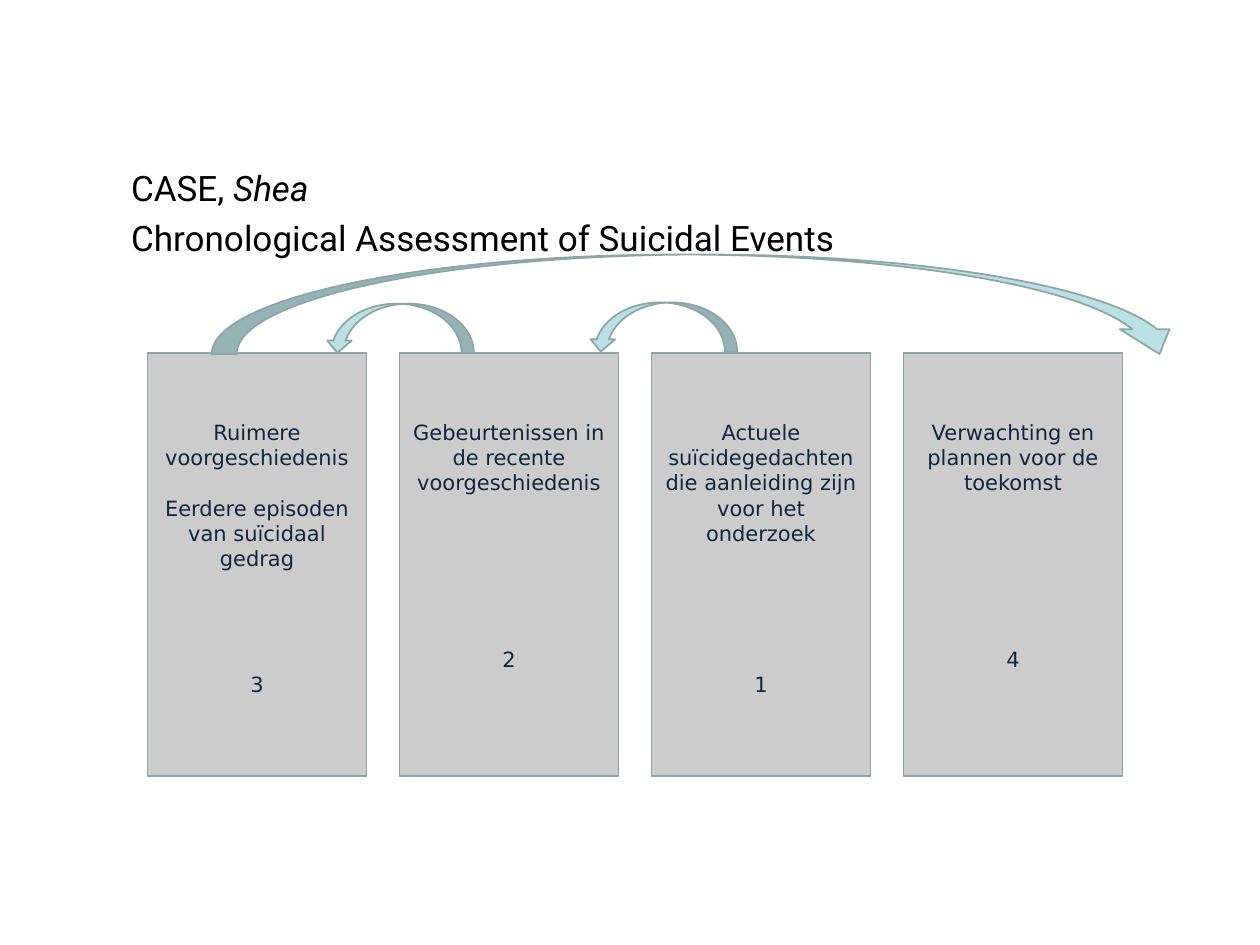
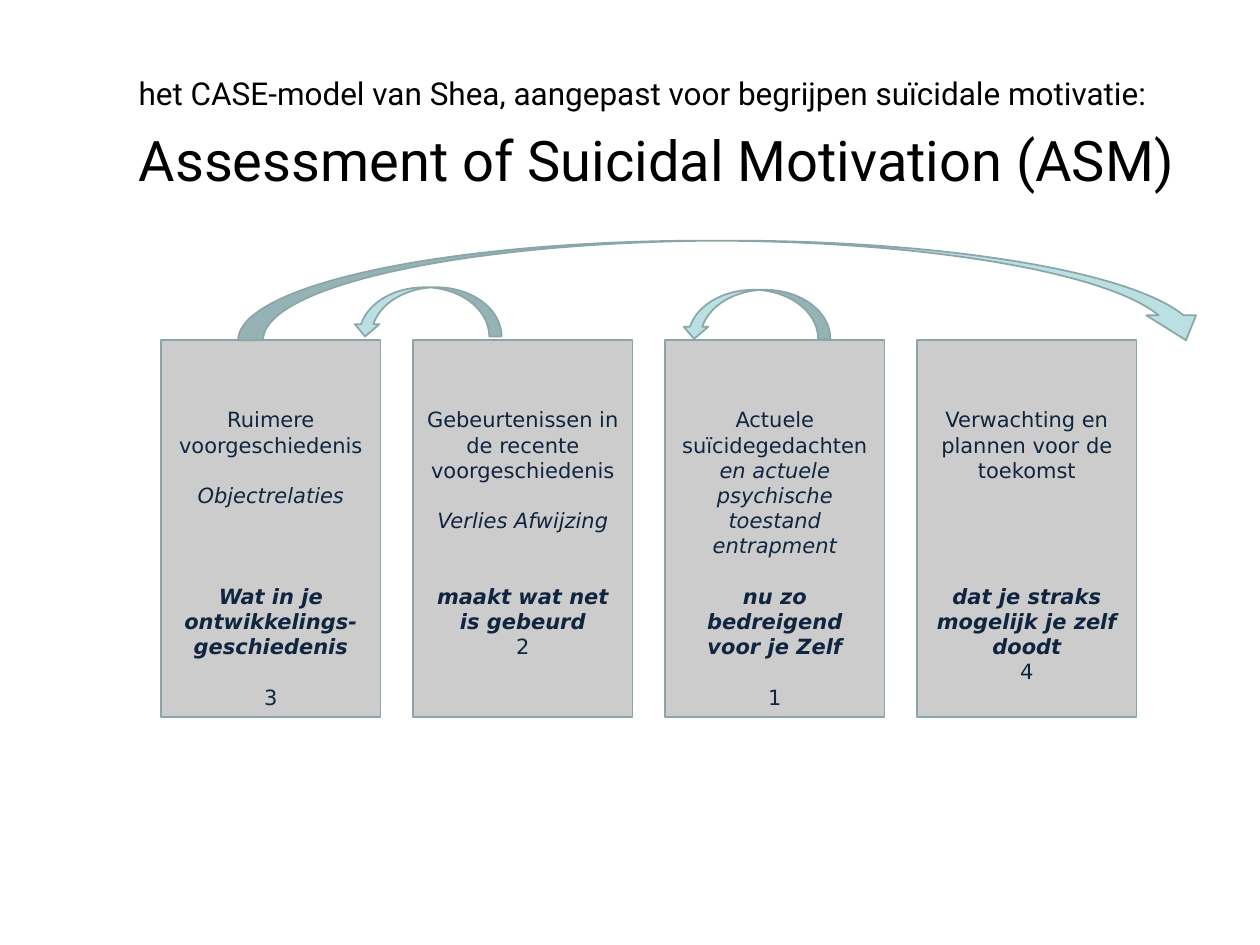
from dataclasses import dataclass

from pptx import Presentation
from pptx.dml.color import RGBColor
from pptx.enum.shapes import MSO_SHAPE
from pptx.enum.text import MSO_ANCHOR, MSO_AUTO_SIZE, PP_ALIGN
from pptx.util import Inches, Pt

RECT = MSO_SHAPE.RECTANGLE
ARC_FORWARD = MSO_SHAPE.CURVED_DOWN_ARROW
ARC_BACK = MSO_SHAPE.CURVED_UP_ARROW
TOP = MSO_ANCHOR.TOP
LEFT, CENTER = PP_ALIGN.LEFT, PP_ALIGN.CENTER
NO_FIT = MSO_AUTO_SIZE.NONE

TITLE_ONLY = 5
TITLE_FONT, CARD_FONT = "Roboto", "DejaVu Sans"
BLACK, GREY, AQUA, EDGE = "000000", "CCCCCC", "BBE0E3", "8AA6A8"
INKS = ("10253F", "0F243E")
CARD_SIZE, CARD_LINE = 12, 14.4
CARD_WIDTH, CARD_STEP, CARD_INSET = 1.74, 2.0, 0.53


@dataclass
class Run:
    """A piece of text with its emphasis."""
    text: str
    italic: bool = False
    bold: bool = False


@dataclass
class Para:
    """Runs of one paragraph and the number of lines left free above it."""
    runs: list[Run]
    gap: int = 0


@dataclass
class TitleLine:
    """One line of a title with its size and space before in points."""
    runs: list[Run]
    size: float
    before: float = 0


@dataclass
class Box:
    """A place on the slide in inches."""
    left: float
    top: float
    width: float
    height: float


@dataclass
class Model:
    """Everything shown on one slide."""
    title_box: Box
    title: list[TitleLine]
    first_card: Box
    cards: list[list[Para]]
    forward: Box
    back: list[Box]


def color(hex_value: str) -> RGBColor:
    """Turn a hex string into a colour."""
    return RGBColor.from_string(hex_value)


def plain(text: str, gap: int = 0) -> Para:
    """Make an upright paragraph."""
    return Para([Run(text)], gap)


def slanted(text: str, gap: int = 0) -> Para:
    """Make an italic paragraph."""
    return Para([Run(text, italic=True)], gap)


def strong(text: str, gap: int = 0) -> Para:
    """Make a bold italic paragraph."""
    return Para([Run(text, italic=True, bold=True)], gap)


def add_runs(p, runs: list[Run], font: str, size: float, ink: str) -> None:
    """Add formatted runs to a paragraph."""
    for run in runs:
        r = p.add_run()
        r.text = run.text
        r.font.name, r.font.size = font, Pt(size)
        r.font.bold, r.font.italic = run.bold, run.italic
        r.font.color.rgb = color(ink)


def next_para(tf, index: int):
    """Return the first paragraph or append a new one."""
    return tf.add_paragraph() if index else tf.paragraphs[0]


def place(sp, box: Box) -> None:
    """Move and size a shape."""
    sp.left, sp.top = Inches(box.left), Inches(box.top)
    sp.width, sp.height = Inches(box.width), Inches(box.height)


def add_title(s, box: Box, lines: list[TitleLine]) -> None:
    """Fill and format the title placeholder."""
    sp = s.shapes.title
    place(sp, box)
    tf = sp.text_frame
    tf.word_wrap, tf.auto_size, tf.vertical_anchor = True, NO_FIT, TOP
    for i, line in enumerate(lines):
        p = next_para(tf, i)
        p.alignment, p.space_before = LEFT, Pt(line.before)
        add_runs(p, line.runs, TITLE_FONT, line.size, BLACK)


def add_outlined(s, kind, box: Box, fill: str):
    """Add a filled shape with the shared outline."""
    sp = s.shapes.add_shape(kind, Inches(box.left), Inches(box.top),
                            Inches(box.width), Inches(box.height))
    sp.shadow.inherit = False
    sp.fill.solid()
    sp.fill.fore_color.rgb = color(fill)
    sp.line.color.rgb = color(EDGE)
    sp.line.width = Pt(1)
    return sp


def add_card(s, box: Box, paras: list[Para], ink: str) -> None:
    """Add a phase card with its text."""
    tf = add_outlined(s, RECT, box, GREY).text_frame
    tf.word_wrap, tf.vertical_anchor = True, TOP
    tf.margin_top = Inches(CARD_INSET)
    for i, para in enumerate(paras):
        p = next_para(tf, i)
        p.alignment, p.space_before = CENTER, Pt(para.gap * CARD_LINE)
        add_runs(p, para.runs, CARD_FONT, CARD_SIZE, ink)


def add_model(prs, model: Model) -> None:
    """Add a slide with title, four cards and their arrows."""
    s = prs.slides.add_slide(prs.slide_layouts[TITLE_ONLY])
    add_title(s, model.title_box, model.title)
    first = model.first_card
    for i, paras in enumerate(model.cards):
        box = Box(first.left + i * CARD_STEP, first.top, first.width, first.height)
        add_card(s, box, paras, INKS[i % len(INKS)])
    add_outlined(s, ARC_FORWARD, model.forward, AQUA)
    for box in model.back:
        add_outlined(s, ARC_BACK, box, AQUA).rotation = 180


def forward_arc(left: float, top: float) -> Box:
    """Place the long arrow."""
    return Box(left, top, 7.72, 0.79)


def back_arc(left: float, top: float) -> Box:
    """Place a short arrow."""
    return Box(left, top, 1.18, 0.39)


HISTORY = "Ruimere voorgeschiedenis"
RECENT = "Gebeurtenissen in de recente voorgeschiedenis"
FUTURE = "Verwachting en plannen voor de toekomst"

CASE = Model(
    title_box=Box(0.94, 1.27, 8.35, 0.9),
    title=[
        TitleLine([Run("CASE, "), Run("Shea", italic=True)], 20),
        TitleLine([Run("Chronological Assessment of Suicidal Events")], 20, 4.6),
    ],
    first_card=Box(1.17, 2.8, CARD_WIDTH, 3.36),
    cards=[
        [plain(HISTORY), plain("Eerdere episoden van suïcidaal gedrag", 1), plain("3", 4)],
        [plain(RECENT), plain("2", 6)],
        [plain("Actuele suïcidegedachten die aanleiding zijn voor het onderzoek"),
         plain("1", 5)],
        [plain(FUTURE), plain("4", 6)],
    ],
    forward=forward_arc(1.68, 2.02),
    back=[back_arc(4.67, 2.4), back_arc(2.58, 2.41)],
)

ASM = Model(
    title_box=Box(1, 0.54, 8.5, 1.1),
    title=[
        TitleLine([Run("het CASE-model van Shea, aangepast voor begrijpen "
                       "suïcidale motivatie:")], 18),
        TitleLine([Run("Assessment of Suicidal Motivation (ASM)")], 32, 7.5),
    ],
    first_card=Box(1.28, 2.7, CARD_WIDTH, 2.99),
    cards=[
        [plain(HISTORY), slanted("Objectrelaties", 1),
         strong("Wat in je ontwikkelings-", 3), strong("geschiedenis"), plain("3", 1)],
        [plain(RECENT), slanted("Verlies Afwijzing", 1),
         strong("maakt wat net is gebeurd", 2), plain("2")],
        [Para([Run("Actuele suïcidegedachten "),
               Run("en actuele psychische toestand", italic=True)]),
         slanted("entrapment"), strong("nu zo bedreigend voor je Zelf", 1), plain("1", 1)],
        [plain(FUTURE), strong("dat je straks mogelijk je zelf doodt", 4), plain("4")],
    ],
    forward=forward_arc(1.89, 1.91),
    back=[back_arc(5.41, 2.3), back_arc(2.8, 2.28)],
)


def main() -> None:
    """Build and save the presentation."""
    prs = Presentation()
    prs.slide_width, prs.slide_height = Inches(10), Inches(7.5)
    for model in (CASE, ASM):
        add_model(prs, model)
    prs.save("out.pptx")


if __name__ == "__main__":
    main()
